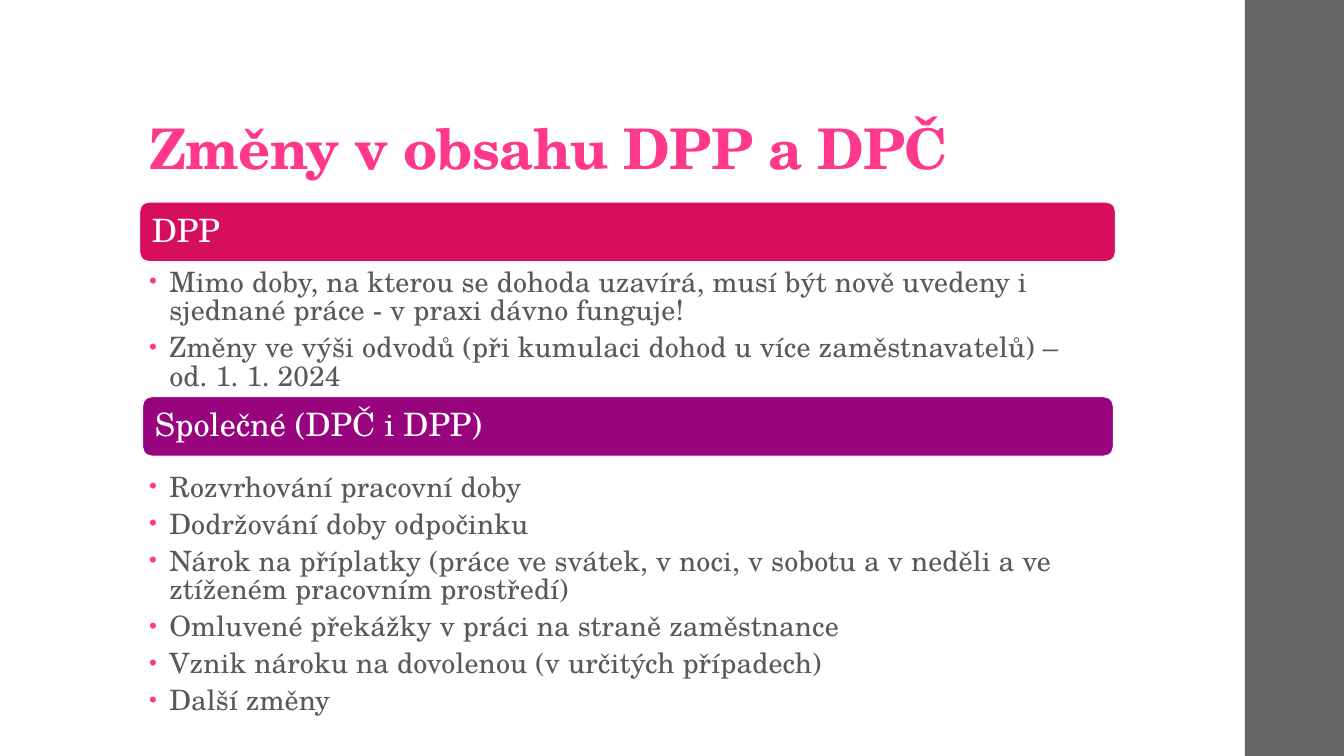
import pptx
import pptx.util
import pptx.dml.color
import pptx.enum.shapes
import pptx.enum.text
from lxml import etree

Pt = pptx.util.Pt
ANCHOR = pptx.enum.text.MSO_ANCHOR
SHAPES = pptx.enum.shapes.MSO_SHAPE

# Content
TITLE = "Změny v obsahu DPP a DPČ"
SECTIONS = [
    {
        "heading": "DPP",
        "fill": "D70D5E",
        "bar": (99.4, 144, 697.7, 43.2),
        "points_top": 192.4,
        "points": [
            "Mimo doby, na kterou se dohoda uzavírá, musí být nově uvedeny i sjednané práce - v praxi dávno funguje!",
            "Změny ve výši odvodů (při kumulaci dohod u více zaměstnavatelů) – od. 1. 1. 2024",
        ],
    },
    {
        "heading": "Společné (DPČ i DPP)",
        "fill": "98037E",
        "bar": (101.5, 283, 694.1, 43.2),
        "points_top": 338.9,
        "points": [
            "Rozvrhování pracovní doby",
            "Dodržování doby odpočinku",
            "Nárok na příplatky (práce ve svátek, v noci, v sobotu a v neděli a ve ztíženém pracovním prostředí)",
            "Omluvené překážky v práci na straně zaměstnance",
            "Vznik nároku na dovolenou (v určitých případech)",
            "Další změny",
        ],
    },
]

# Formats
FONT = "TeX Gyre Schola"
PINK = "FF388C"
TITLE_FONT = {"size": Pt(40), "bold": True}
HEADING_FONT = {"size": Pt(23)}
POINT_FONT = {"size": Pt(20)}
POINT_SPACING = {"line_spacing": 0.85, "space_before": Pt(3), "space_after": Pt(3)}
TIGHT = {"line_spacing": 0.9}
LEFT, TEXT_WIDTH, LINE_HEIGHT = 99.4, 683.3, 26.3
INDENT = 14.4


def color(hex_code):
    return pptx.dml.color.RGBColor.from_string(hex_code)


def apply(target, values):
    for name, value in values.items():
        setattr(target, name, value)


def set_frame(frame, anchor, left, top, right, bottom):
    apply(frame, {
        "word_wrap": True, "vertical_anchor": anchor,
        "margin_left": Pt(left), "margin_top": Pt(top),
        "margin_right": Pt(right), "margin_bottom": Pt(bottom),
    })


def write(paragraph, text, font, ink, spacing, tracking=0):
    run = paragraph.add_run()
    run.text = text
    apply(run.font, {"name": FONT, **font})
    run.font.color.rgb = color(ink)
    run.font._element.set("spc", str(tracking))
    apply(paragraph, {"alignment": pptx.enum.text.PP_ALIGN.LEFT, **spacing})


def add_bullet(paragraph):
    properties = paragraph._p.get_or_add_pPr()
    indent = int(Pt(INDENT))
    properties.set("marL", str(indent))
    properties.set("indent", str(-indent))
    namespace = properties.nsmap["a"]

    def child(parent, tag, **values):
        return etree.SubElement(parent, f"{{{namespace}}}{tag}", **values)

    child(child(properties, "buClr"), "srgbClr", val=PINK)
    child(properties, "buSzPct", val="80000")
    child(properties, "buFont", typeface="Arial")
    child(properties, "buChar", char="•")


deck = pptx.Presentation()
apply(deck, {"slide_width": Pt(960), "slide_height": Pt(540)})
slide = deck.slides.add_slide(deck.slide_layouts[6])


def add_box(shape_kind, box, fill):
    shape = slide.shapes.add_shape(shape_kind, *map(Pt, box))
    shape.shadow.inherit = False
    shape.fill.solid()
    shape.fill.fore_color.rgb = color(fill)
    shape.line.fill.background()
    return shape


# Side band
add_box(SHAPES.RECTANGLE, (889.2, 0, 70.8, 540), "666666")

# Title
title = slide.shapes.add_textbox(Pt(LEFT), Pt(20.9), Pt(763.2), Pt(112.3)).text_frame
set_frame(title, ANCHOR.BOTTOM, 7.2, 2.2, 7.2, 3.6)
write(title.paragraphs[0], TITLE, TITLE_FONT, PINK, TIGHT, -50)

# Heading bars with their bullet points
for section in SECTIONS:
    points_height = LINE_HEIGHT * (len(section["points"]) + 1)
    points = slide.shapes.add_textbox(
        Pt(LEFT), Pt(section["points_top"]), Pt(TEXT_WIDTH), Pt(points_height)).text_frame
    set_frame(points, ANCHOR.TOP, 7.2, 0, 7.2, 0)
    for number, point in enumerate(section["points"]):
        paragraph = points.add_paragraph() if number else points.paragraphs[0]
        write(paragraph, point, POINT_FONT, "595959", POINT_SPACING, 10)
        add_bullet(paragraph)

    bar = add_box(SHAPES.ROUNDED_RECTANGLE, section["bar"], section["fill"])
    bar.line.color.rgb = color("F9F9F9")
    bar.line.width = Pt(1.35)
    set_frame(bar.text_frame, ANCHOR.MIDDLE, 7, 7, 7, 7)
    write(bar.text_frame.paragraphs[0], section["heading"], HEADING_FONT, "FFFFFF", TIGHT)

deck.save("out.pptx")
